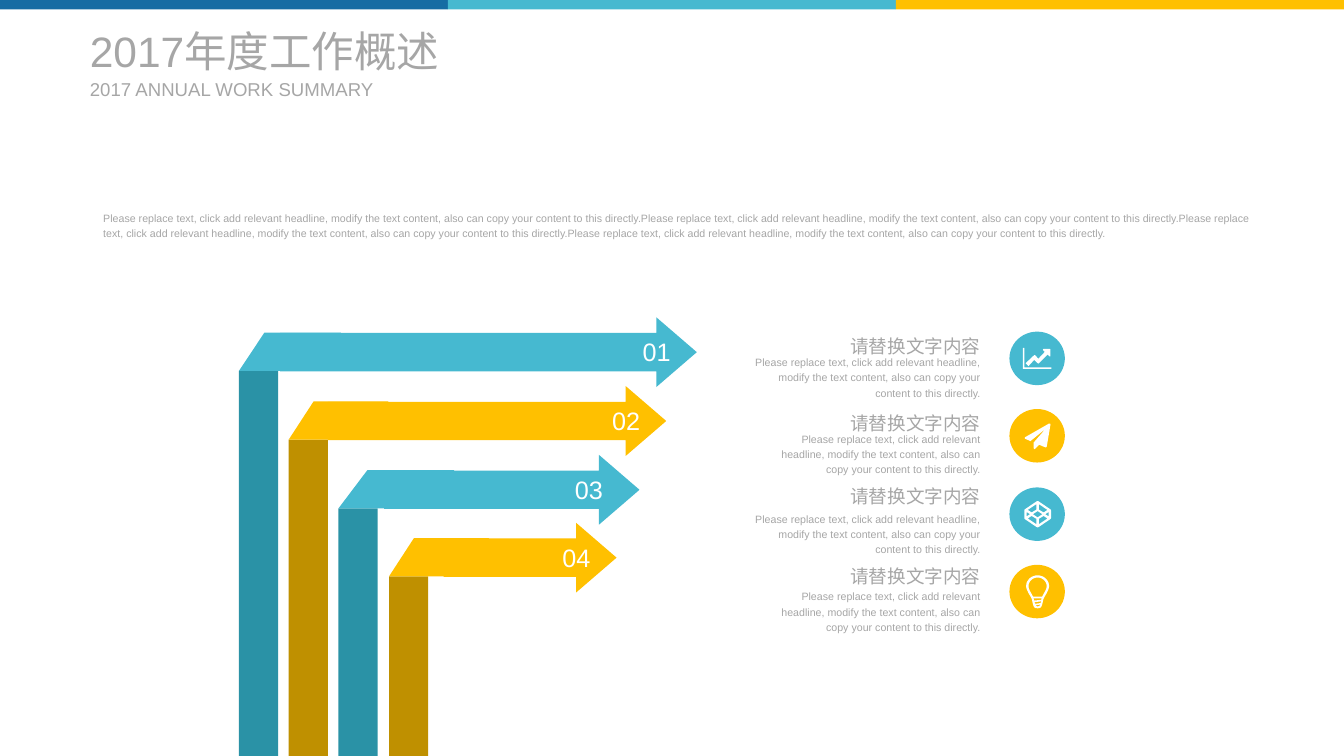
"""Build the annual work summary slide with four folded arrows and four notes."""
from pptx import Presentation
from pptx import util as u
from pptx.dml.color import RGBColor
from pptx.enum import shapes, text

PX = 9144
ICON_UNIT = PX / 10
WIDTH, HEIGHT = 1406, 791
FONT = "Arial"
COLORS = {
    "blue": "166CA3", "teal": "46B9D0", "gold": "FFC000",
    "dark teal": "2A92A6", "dark gold": "BF9000",
    "gray": "A6A6A6", "white": "FFFFFF",
}
KIND = shapes.MSO_SHAPE
ALIGN = text.PP_ALIGN
ANCHOR = text.MSO_ANCHOR
REPLACE = ("Please replace text, click add relevant headline, modify the text content, "
           "also can copy your content to this directly.")
HEADING = "请替换文字内容"


def px(length):
    """Turn px into EMU."""
    return u.Emu(round(length * PX))


def write(shape, words, size=8, color="gray", align=ALIGN.LEFT, anchor=ANCHOR.TOP,
          line_spacing=1.0, before=0, wrap=True):
    """Put formatted text into a shape without insets."""
    frame = shape.text_frame
    frame.margin_left = frame.margin_right = frame.margin_top = frame.margin_bottom = 0
    frame.auto_size = text.MSO_AUTO_SIZE.NONE
    frame.word_wrap = wrap
    frame.vertical_anchor = anchor
    paragraph = frame.paragraphs[0]
    paragraph.alignment = align
    paragraph.line_spacing = line_spacing
    paragraph.space_before = u.Pt(before)
    run = paragraph.add_run()
    run.text = words
    run.font.name = FONT
    run.font.size = u.Pt(size)
    run.font.color.rgb = RGBColor.from_string(COLORS[color])


def add_text(slide, box, words, **style):
    """Add a text box."""
    write(slide.shapes.add_textbox(*map(px, box)), words, **style)


def paint(shape, color):
    """Give a shape a flat fill with no line or shadow."""
    shape.shadow.inherit = False
    shape.fill.solid()
    shape.fill.fore_color.rgb = RGBColor.from_string(COLORS[color])
    shape.line.fill.background()


def add_block(slide, kind, box, color):
    """Add a flat preset shape."""
    shape = slide.shapes.add_shape(kind, *map(px, box))
    paint(shape, color)
    return shape


def add_icon(slide, left, top, contours):
    """Add a white icon made of closed contours."""
    first, *rest = contours
    builder = slide.shapes.build_freeform(*first[0], scale=ICON_UNIT)
    builder.add_line_segments(first[1:], close=True)
    for contour in rest:
        builder.move_to(*contour[0])
        builder.add_line_segments(contour[1:], close=True)
    paint(builder.convert_to_shape(px(left), px(top)), "white")


def flip_x(points):
    """Mirror icon points about the vertical axis."""
    return [(590 - x, y) for x, y in points]


def flip_y(points):
    """Mirror icon points about the horizontal axis."""
    return [(x, 560 - y) for x, y in points]


def curve(start, *controls, steps=10):
    """Sample a chain of cubic curves."""
    points = [start]
    for i in range(0, len(controls), 3):
        knots = [points[-1], *controls[i:i + 3]]
        for step in range(1, steps + 1):
            t = step / steps
            weights = ((1 - t) ** 3, 3 * t * (1 - t) ** 2, 3 * t * t * (1 - t), t ** 3)
            points.append(tuple(round(sum(w * k[axis] for w, k in zip(weights, knots)))
                                for axis in (0, 1)))
    return points


def chart_icon():
    """Return the axes and the rising line."""
    return [
        [(440, 390), (140, 390), (140, 170), (158, 170), (158, 373), (440, 373)],
        [(430, 250), (425, 262), (400, 240), (310, 330), (303, 334), (296, 330),
         (260, 295), (200, 360), (170, 330), (258, 247), (264, 244), (270, 248),
         (303, 283), (370, 212), (350, 192), (355, 180), (425, 180), (430, 187)],
    ]


def plane_icon():
    """Return the paper plane."""
    return [[(430, 160), (390, 395), (382, 401), (375, 400), (310, 373), (270, 415),
             (263, 419), (254, 410), (254, 350), (380, 205), (220, 335), (165, 311),
             (160, 303), (165, 294), (415, 151), (425, 151)]]


def cube_icon():
    """Return the wireframe cube."""
    corner = [(155, 280), (155, 240), (160, 230), (285, 145), (295, 142)]
    left = corner + flip_y(corner)[::-1]
    side = [(215, 280), (180, 257), (180, 303)]
    pane = [(282, 232), (282, 175), (192, 235), (232, 262)]
    center = [(345, 280), (295, 247), (245, 280), (295, 313)]
    panes = [pane, flip_x(pane), flip_y(pane), flip_x(flip_y(pane))]
    return [corner + flip_x(corner)[::-1] + flip_x(flip_y(corner)) + left[5:][::-1][::-1],
            side, flip_x(side), center, *panes]


def bulb_icon():
    """Return the light bulb."""
    outer = curve((295, 110), (360, 110), (415, 160), (415, 220),
                  (415, 270), (370, 320), (355, 360), (340, 430), (340, 455), (295, 455))
    inner = curve((295, 133), (345, 133), (390, 172), (390, 222),
                  (390, 250), (372, 280), (357, 305), (352, 315), (348, 322), (343, 332))
    return [
        outer + flip_x(outer)[::-1],
        inner + flip_x(inner)[::-1],
        [(252, 350), (338, 350), (332, 366), (259, 374)],
        [(262, 392), (332, 382), (326, 400), (270, 408)],
        [(275, 423), (322, 416), (314, 430), (295, 436), (283, 432)],
    ]


def add_folded_arrow(slide, number, color, post_left, top, fold_width, left, right, label_left):
    """Add a post that folds into a numbered arrow."""
    post_top = top + 56
    add_block(slide, KIND.RECTANGLE, (post_left, post_top, 41, HEIGHT - post_top), f"dark {color}")
    arrow = add_block(slide, KIND.RIGHT_ARROW, (left, top, right - left, 73), color)
    arrow.adjustments[0], arrow.adjustments[1] = 0.55, 0.58
    fold = add_block(slide, KIND.FLOWCHART_MANUAL_OPERATION,
                     (post_left, top + 16, fold_width, 40), color)
    fold.rotation = 180
    add_text(slide, (label_left, top + 20, 50, 32), f"{number:02}", size=19, color="white",
             align=ALIGN.CENTER, anchor=ANCHOR.MIDDLE, before=3.8, wrap=False)


def add_note(slide, color, heading_top, spacing, body_top, body_left, circle_top, icon):
    """Add a right-aligned note with its round icon."""
    add_text(slide, (881, heading_top, 145, 28), HEADING, size=14,
             align=ALIGN.RIGHT, line_spacing=spacing)
    add_text(slide, (body_left, body_top, 1026 - body_left, 47), REPLACE,
             align=ALIGN.RIGHT, line_spacing=1.2, before=1.6)
    add_block(slide, KIND.OVAL, (1056, circle_top, 58, 56), color)
    add_icon(slide, 1056, circle_top, icon)


def add_title(slide):
    """Place the title and its subtitle."""
    title = slide.shapes.title
    title.left, title.top, title.width, title.height = map(px, (94, 26, 432, 54))
    write(title, "2017年度工作概述", size=32, anchor=ANCHOR.MIDDLE)
    add_text(slide, (94, 81, 307, 24), "2017 ANNUAL WORK SUMMARY", size=14, anchor=ANCHOR.MIDDLE)


def main():
    """Build and save the slide."""
    presentation = Presentation()
    presentation.slide_width, presentation.slide_height = px(WIDTH), px(HEIGHT)
    slide = presentation.slides.add_slide(presentation.slide_layouts[5])
    add_title(slide)
    for i, color in enumerate(("blue", "teal", "gold")):
        add_block(slide, KIND.RECTANGLE, (i * WIDTH / 3, 0, WIDTH / 3, 10), color)
    add_text(slide, (108, 219, 1202, 31), REPLACE * 4, line_spacing=1.2)
    arrows = [
        ("teal", 250, 332, 133, 293, 729, 662),
        ("gold", 302, 404, 130, 343, 697, 630),
        ("teal", 354, 476, 151, 402, 669, 591),
        ("gold", 407, 547, 130, 464, 645, 578),
    ]
    for number, arrow in enumerate(arrows, 1):
        add_folded_arrow(slide, number, *arrow)
    notes = [
        ("teal", 346, 1.2, 370, 790, 347, chart_icon()),
        ("gold", 426, 1.2, 450, 793, 428, plane_icon()),
        ("teal", 507, 1.0, 534, 790, 510, cube_icon()),
        ("gold", 591, 1.0, 615, 793, 591, bulb_icon()),
    ]
    for note in notes:
        add_note(slide, *note)
    presentation.save("out.pptx")


if __name__ == "__main__":
    main()
